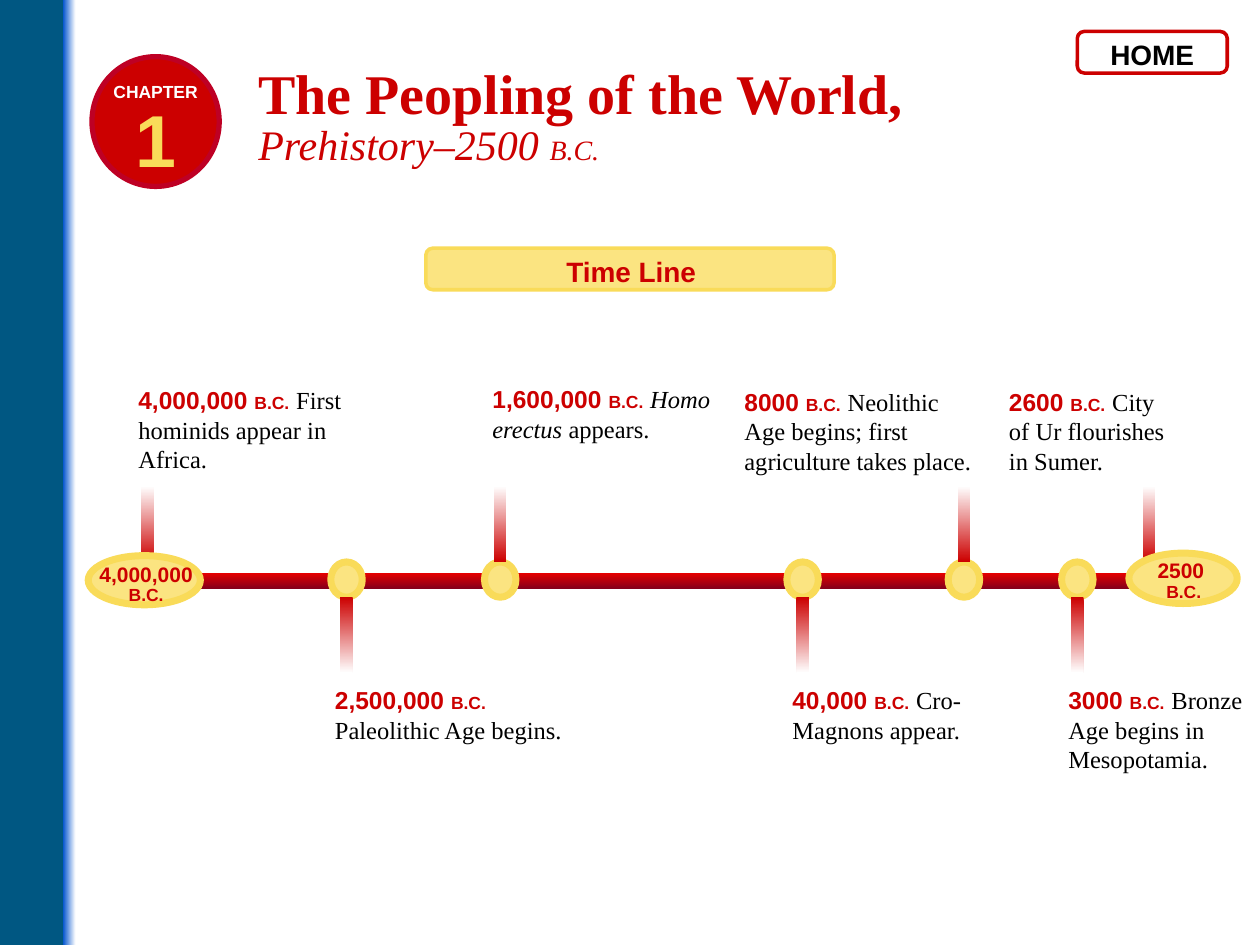
import copy

from pptx import Presentation
from pptx.dml.color import RGBColor
from pptx.enum import shapes, text
from pptx.util import Inches, Pt

# Content
COLORS = {
    "red": "CC0000", "rim": "BE0024", "gold": "F9DB59", "cream": "FBE481",
    "teal": "005782", "blue": "0053CE", "white": "FFFFFF", "black": "000000",
    "bar_top": "E40000", "bar_bottom": "86001A",
}
SANS, SERIF = "Arial", "Times New Roman"

# Run styles: font, size, colour, bold, italic
STYLES = {
    "title": (SERIF, 32, "red", True, False),
    "subtitle": (SERIF, 24, "red", False, True),
    "subtitle_era": (SERIF, 16, "red", False, True),
    "chapter": (SANS, 10, "white", True, False),
    "number": (SANS, 42, "gold", True, False),
    "heading": (SANS, 16, "red", True, False),
    "home": (SANS, 16, "black", True, False),
    "year": (SANS, 14, "red", True, False),
    "era": (SANS, 10, "red", True, False),
    "gap": (SANS, 14, "black", False, False),
    "event": (SERIF, 14, "black", False, False),
    "species": (SERIF, 14, "black", False, True),
    "end_year": (SANS, 12, "red", True, False),
}

TITLE = [("The Peopling of the World, \n", "title"),
         ("Prehistory–2500 ", "subtitle"), ("B.C.", "subtitle_era")]

# Year, event runs, text box (left, top, width, height)
EVENTS = [
    ("4,000,000", [("First hominids appear in Africa.", "event")], (1, 3.01, 2.26, 0.57)),
    ("2,500,000", [("Paleolithic Age begins.", "event")], (2.56, 5.39, 2.17, 0.58)),
    ("1,600,000", [("Homo erectus", "species"), (" appears.", "event")], (3.81, 3, 2.26, 0.57)),
    ("40,000", [("Cro-Magnons appear.", "event")], (6.19, 5.39, 1.82, 1.03)),
    ("8000", [("Neolithic Age begins; first agriculture takes place.", "event")],
     (5.81, 3.02, 2.1, 0.56)),
    ("3000", [("Bronze Age begins in Mesopotamia.", "event")], (8.38, 5.39, 1.82, 1.03)),
    ("2600", [("City \nof Ur flourishes \nin Sumer.", "event")], (7.91, 3.02, 1.73, 0.56)),
]

# Marker centre, stem direction, whether a dot shows
MARKERS = [(1.17, "up", False), (2.75, "down", True), (3.97, "up", True),
           (6.37, "down", True), (7.65, "up", True), (8.55, "down", True),
           (9.12, "up", False)]

# End caps: oval box, label box, runs, line spacing
END_CAPS = [
    ((0.7, 4.41, 0.89, 0.39), (0.67, 4.44, 0.98, 0.41),
     [("4,000,000 ", "end_year"), ("B.C.", "era")], 0.85),
    ((8.96, 4.39, 0.86, 0.4), (8.85, 4.4, 1.09, 0.43),
     [("2500 \n", "end_year"), ("B.C.", "era")], 0.9),
]

DOT_W, DOT_H, DOT_TOP = 0.25, 0.28, 4.46
STEM_W, STEM_H = 0.1, 0.6

RECT = shapes.MSO_SHAPE.RECTANGLE
ROUNDED = shapes.MSO_SHAPE.ROUNDED_RECTANGLE
OVAL = shapes.MSO_SHAPE.OVAL
CENTER = text.PP_ALIGN.CENTER
MIDDLE = text.MSO_ANCHOR.MIDDLE

prs = Presentation()
prs.slide_width, prs.slide_height = Inches(10), Inches(7.5)
slide = prs.slides.add_slide(prs.slide_layouts[5])


def rgb(name):
    return RGBColor.from_string(COLORS[name])


def inches(box):
    return [Inches(value) for value in box]


def add_part(kind, box, fill=None, gradient=None, angle=270, line=None, width=0):
    """Add a preset shape with a solid, gradient or empty fill."""
    part = slide.shapes.add_shape(kind, *inches(box))
    part.shadow.inherit = False
    if kind == ROUNDED:
        part.adjustments[0] = 0.167
    if gradient:
        part.fill.gradient()
        part.fill.gradient_angle = angle
        for stop, name in zip(part.fill.gradient_stops, gradient):
            stop.color.rgb = rgb(name)
    elif fill:
        part.fill.solid()
        part.fill.fore_color.rgb = rgb(fill)
    else:
        part.fill.background()
    if line:
        part.line.color.rgb = rgb(line)
        part.line.width = Pt(width)
    else:
        part.line.fill.background()


def write(runs, box, holder=None, align=text.PP_ALIGN.LEFT,
          anchor=text.MSO_ANCHOR.TOP, spacing=None, wrap=True):
    """Write styled runs in a placeholder or a new text box."""
    holder = holder or slide.shapes.add_textbox(*inches(box))
    holder.left, holder.top, holder.width, holder.height = inches(box)
    frame = holder.text_frame
    frame.auto_size = text.MSO_AUTO_SIZE.NONE
    frame.word_wrap, frame.vertical_anchor = wrap, anchor
    paragraph = frame.paragraphs[0]
    paragraph.alignment = align
    if spacing:
        paragraph.line_spacing = spacing
    for words, style in runs:
        font, size, color, bold, italic = STYLES[style]
        lines = words.split("\n")
        for index, line in enumerate(lines):
            if not line:
                continue
            run = paragraph.add_run()
            run.text = line
            run.font.name, run.font.size = font, Pt(size)
            run.font.bold, run.font.italic = bold, italic
            run.font.color.rgb = rgb(color)
            if index < len(lines) - 1:
                # The break keeps the size of the line it ends
                paragraph.add_line_break()
                paragraph._p[-1].append(copy.deepcopy(run._r.rPr))


# Side band
add_part(RECT, (0.5, 0, 0.1, 7.5), gradient=("blue", "white"), angle=0)
add_part(RECT, (0, 0, 0.5, 7.5), fill="teal")

# Chapter badge and title
add_part(OVAL, (0.73, 0.45, 1.01, 1.03), fill="red", line="rim", width=3)
write([("1", "number")], (0.79, 0.7, 0.9, 0.8), align=CENTER, anchor=MIDDLE)
write([("CHAPTER", "chapter")], (0.8, 0.59, 0.87, 0.27),
      align=CENTER, anchor=MIDDLE, wrap=False)
write(TITLE, (1.95, 0.5, 5.63, 0.89), holder=slide.shapes.title, spacing=0.85)

# Home button and heading
add_part(ROUNDED, (8.55, 0.25, 1.19, 0.33), line="red", width=2)
write([("HOME", "home")], (8.71, 0.25, 0.87, 0.37),
      align=CENTER, anchor=MIDDLE, wrap=False)
add_part(ROUNDED, (3.38, 1.97, 3.24, 0.33), fill="cream", line="gold", width=2)
write([("Time Line", "heading")], (4.39, 1.97, 1.24, 0.37),
      align=CENTER, anchor=MIDDLE, wrap=False)

# Time line bar, then dots and stems
add_part(RECT, (1.5, 4.55, 7.54, 0.12), gradient=("bar_top", "bar_bottom"))
for center, direction, has_dot in MARKERS:
    if has_dot:
        add_part(OVAL, (center - DOT_W / 2, DOT_TOP, DOT_W, DOT_H),
                 fill="cream", line="gold", width=4)
    up = direction == "up"
    stem_top = DOT_TOP - STEM_H if up else DOT_TOP + DOT_H
    add_part(RECT, (center - STEM_W / 2, stem_top, STEM_W, STEM_H),
             gradient=("white", "red") if up else ("red", "white"))

# End caps
for oval, label, runs, spacing in END_CAPS:
    add_part(OVAL, oval, fill="cream", line="gold", width=4)
    write(runs, label, align=CENTER, anchor=MIDDLE, spacing=spacing)

# Events
for year, event, box in EVENTS:
    write([(year + " ", "year"), ("B.C.", "era"), (" ", "gap")] + event, box)

prs.save("out.pptx")
